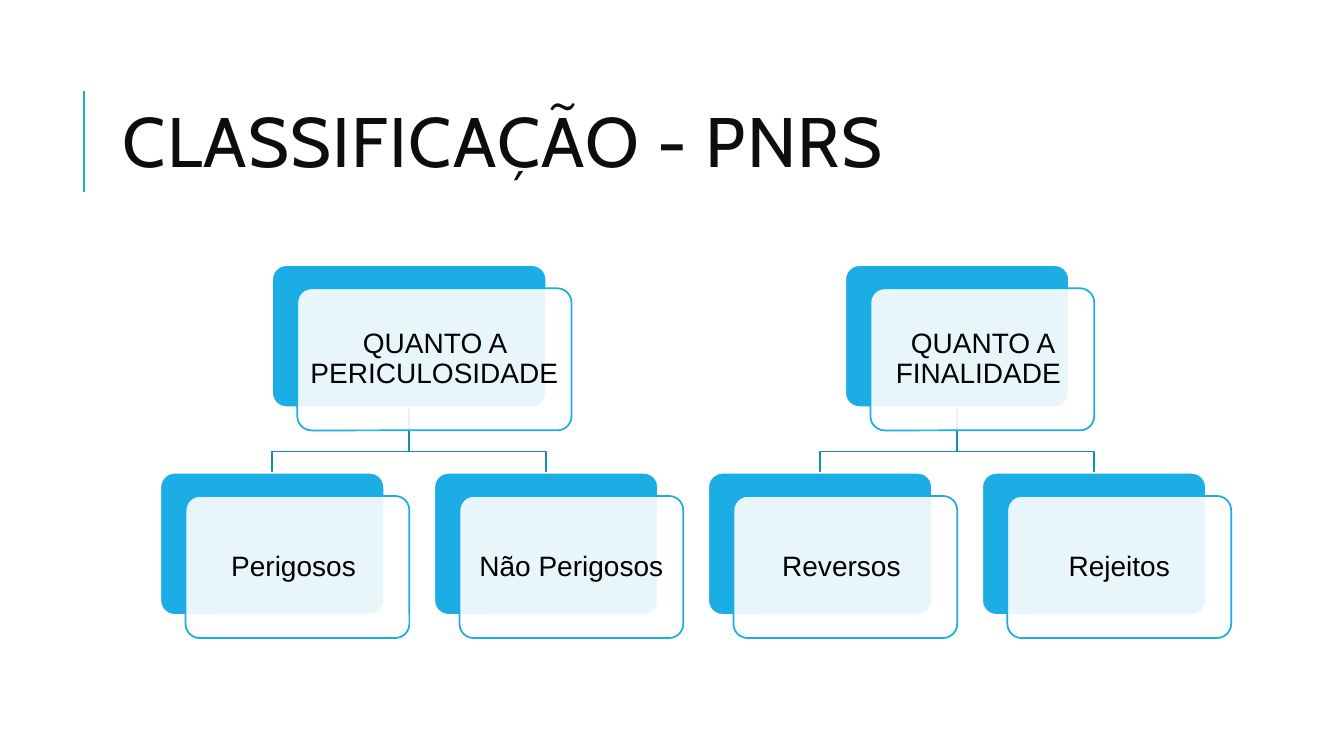
import pptx
import pptx.util
import pptx.dml.color
import pptx.enum.shapes
import pptx.enum.text
import pptx.oxml.ns
from lxml import etree
from dataclasses import dataclass

Inches = pptx.util.Inches
Pt = pptx.util.Pt


@dataclass(frozen=True)
class Theme:
    accent: pptx.dml.color.RGBColor = pptx.dml.color.RGBColor(0x1C, 0xAD, 0xE4)
    branch: pptx.dml.color.RGBColor = pptx.dml.color.RGBColor(0x16, 0x8B, 0xB7)
    white: pptx.dml.color.RGBColor = pptx.dml.color.RGBColor(0xFF, 0xFF, 0xFF)
    heading: pptx.dml.color.RGBColor = pptx.dml.color.RGBColor(0x0D, 0x0D, 0x0D)
    label: pptx.dml.color.RGBColor = pptx.dml.color.RGBColor(0, 0, 0)
    heading_font: str = "Cabin"
    label_font: str = "Arial"
    heading_size: int = 50
    label_size: int = 20


theme = Theme()


def write(shape, text, *, font, size, color, align, line_spacing, inset=None, after=0, tracking=0):
    frame = shape.text_frame
    frame.word_wrap = True
    frame.vertical_anchor = pptx.enum.text.MSO_ANCHOR.MIDDLE
    if inset is not None:
        frame.margin_left = frame.margin_right = Inches(inset)
        frame.margin_top = frame.margin_bottom = Inches(inset)
    paragraph = frame.paragraphs[0]
    paragraph.alignment = align
    paragraph.line_spacing = line_spacing
    paragraph.space_after = Pt(after)
    run = paragraph.add_run()
    run.text = text
    run.font.name = font
    run.font.size = Pt(size)
    run.font.color.rgb = color
    if tracking:
        run.font._element.set("spc", str(tracking * 100))


def add_card(shapes, left, top, width, fill, outline):
    card = shapes.add_shape(
        pptx.enum.shapes.MSO_SHAPE.ROUNDED_RECTANGLE,
        Inches(left), Inches(top), Inches(width), Inches(CARD_HEIGHT))
    card.adjustments[0] = 0.1
    card.shadow.inherit = False
    card.fill.solid()
    card.fill.fore_color.rgb = fill
    card.line.color.rgb = outline
    card.line.width = Pt(1.25)
    return card


CARD_HEIGHT = 1.41
CARD_WIDTH = 2.22
OFFSET_X, OFFSET_Y = 0.25, 0.23
GROUP_TOP, CLASS_TOP = 2.63, 4.69
FORK_Y = 4.48
FIRST_CENTER, PITCH = 2.7, 2.717

classification = [
    ("QUANTO A PERICULOSIDADE ", 2.72, ["Perigosos ", "Não Perigosos"]),
    ("QUANTO A FINALIDADE ", CARD_WIDTH, ["Reversos ", "Rejeitos"]),
]

deck = pptx.Presentation()
deck.slide_width = Inches(13.33)
deck.slide_height = Inches(7.5)
slide = deck.slides.add_slide(deck.slide_layouts[6])

title_rule = slide.shapes.add_connector(
    pptx.enum.shapes.MSO_CONNECTOR.STRAIGHT,
    Inches(0.83), Inches(1.9), Inches(0.83), Inches(0.9))
title_rule.line.color.rgb = theme.accent
title_rule.line.width = Pt(1.5)
etree.SubElement(title_rule._element.spPr, pptx.oxml.ns.qn("a:effectLst"))

title = slide.shapes.add_textbox(Inches(1.12), Inches(0.64), Inches(10.63), Inches(1.64))
write(title, "CLASSIFICAÇÃO - PNRS", font=theme.heading_font, size=theme.heading_size,
      color=theme.heading, align=pptx.enum.text.PP_ALIGN.LEFT, line_spacing=0.8, tracking=1)

hierarchy = slide.shapes.add_group_shape().shapes
cards = []
position = 0
for criterion, criterion_width, classes in classification:
    class_centers = [FIRST_CENTER + PITCH * (position + i) for i in range(len(classes))]
    position += len(classes)
    criterion_center = sum(class_centers) / len(class_centers)
    cards.append((criterion, criterion_center, GROUP_TOP, criterion_width))
    for waste_class, class_center in zip(classes, class_centers):
        cards.append((waste_class, class_center, CLASS_TOP, CARD_WIDTH))
        route = [(criterion_center, GROUP_TOP + CARD_HEIGHT), (criterion_center, FORK_Y),
                 (class_center, FORK_Y), (class_center, CLASS_TOP)]
        points = [(Inches(x), Inches(y)) for x, y in route]
        outline = hierarchy.build_freeform(*points[0])
        outline.add_line_segments(points[1:], close=False)
        branch = outline.convert_to_shape()
        branch.shadow.inherit = False
        branch.fill.background()
        branch.line.color.rgb = theme.branch
        branch.line.width = Pt(1.25)

for label, center, top, width in cards:
    left = center - width / 2
    add_card(hierarchy, left, top, width, theme.accent, theme.white)
    front = add_card(hierarchy, left + OFFSET_X, top + OFFSET_Y, width, theme.white, theme.accent)
    front_color = front._element.spPr.find(pptx.oxml.ns.qn("a:solidFill"))[0]
    etree.SubElement(front_color, pptx.oxml.ns.qn("a:alpha"), val="90000")
    write(front, label, font=theme.label_font, size=theme.label_size, color=theme.label,
          align=pptx.enum.text.PP_ALIGN.CENTER, line_spacing=0.9, inset=0.08, after=7)

deck.save("out.pptx")
